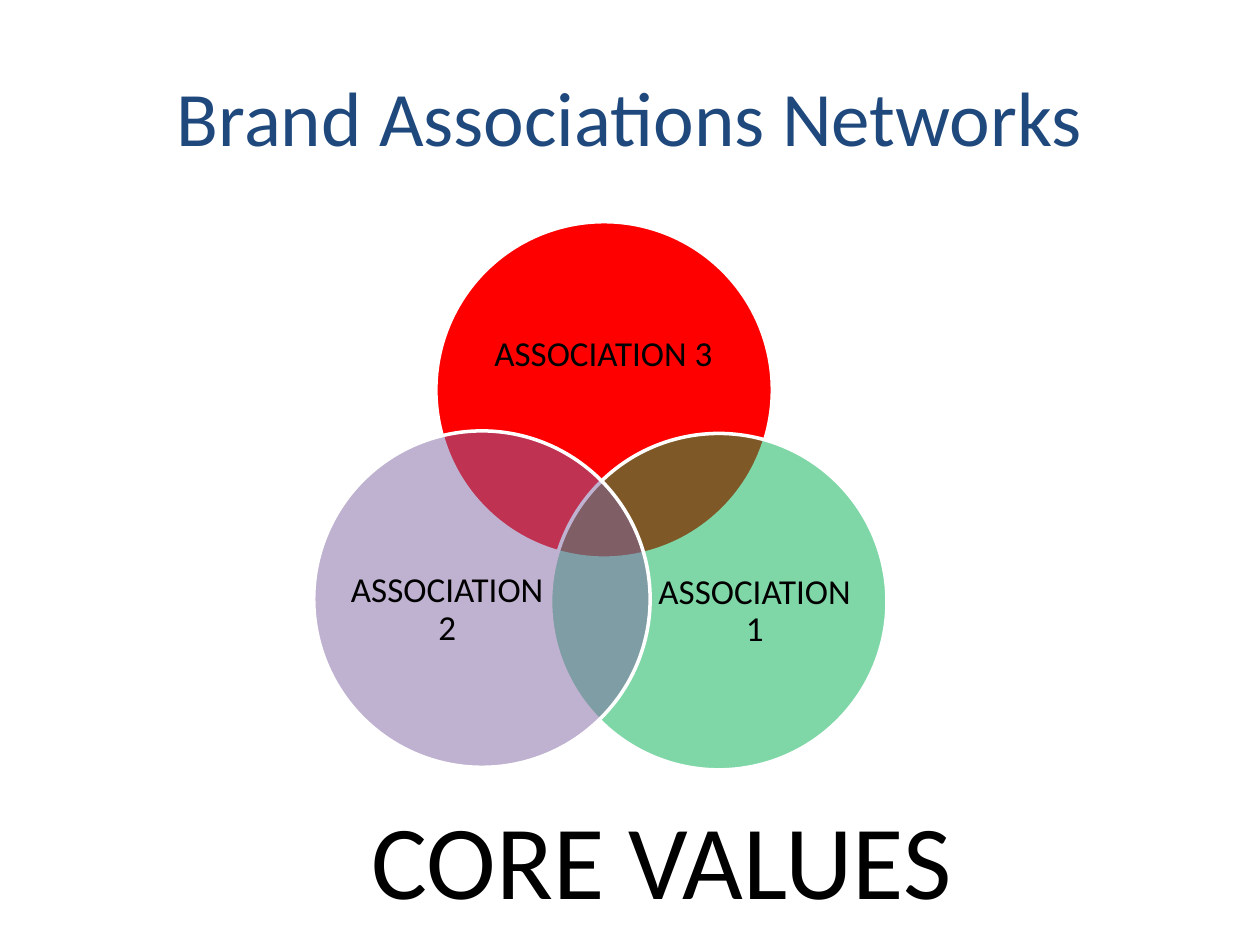
from lxml import etree
from pptx import Presentation
from pptx.dml.color import RGBColor
from pptx.enum.shapes import MSO_SHAPE
from pptx.enum.text import MSO_ANCHOR, PP_ALIGN
from pptx.oxml.ns import qn
from pptx.util import Inches, Pt

OVAL = MSO_SHAPE.OVAL
MIDDLE, TOP = MSO_ANCHOR.MIDDLE, MSO_ANCHOR.TOP
CENTER, LEFT = PP_ALIGN.CENTER, PP_ALIGN.LEFT

NAVY = RGBColor(0x1F, 0x49, 0x7D)
RED = RGBColor(0xFF, 0x00, 0x00)
GREEN = RGBColor(0x00, 0xB0, 0x50)
PURPLE = RGBColor(0x80, 0x64, 0xA2)
BLACK = RGBColor(0x00, 0x00, 0x00)
WHITE = RGBColor(0xFF, 0xFF, 0xFF)

FONT = "Calibri"
DIAMETER = 2.67
CIRCLES = [
    ("ASSOCIATION 3", (3.46, 1.76), RED, 100, (3.81, 2.22, 1.96, 1.2)),
    ("ASSOCIATION 1", (4.37, 3.44), GREEN, 50, (5.19, 4.12, 1.6, 1.47)),
    ("ASSOCIATION 2", (2.49, 3.42), PURPLE, 50, (2.75, 4.11, 1.6, 1.47)),
]


def write(frame, text, size, color=BLACK, align=CENTER, anchor=MIDDLE,
          insets=(0.1, 0.05, 0.1, 0.05), spacing=None, after=None):
    """Put one formatted paragraph into a text frame."""
    frame.word_wrap = True
    frame.vertical_anchor = anchor
    (frame.margin_left, frame.margin_top,
     frame.margin_right, frame.margin_bottom) = map(Inches, insets)
    para = frame.paragraphs[0]
    para.alignment = align
    para.line_spacing = spacing
    para.space_after = after
    span = para.add_run()
    span.text = text
    span.font.name = FONT
    span.font.size = Pt(size)
    span.font.color.rgb = color


class SlideBuilder:
    """Hold the current page and draw its elements in one style."""

    def __init__(self, page):
        self.page = page
        self.outline_color = WHITE
        self.outline_width = Pt(2)

    def title(self, text, area):
        """Place and fill the title placeholder."""
        box = self.page.shapes.title
        box.left, box.top, box.width, box.height = map(Inches, area)
        write(box.text_frame, text, 44, color=NAVY)

    def text(self, text, area, size, **style):
        """Add a text box."""
        box = self.page.shapes.add_textbox(*map(Inches, area))
        write(box.text_frame, text, size, **style)

    def circle(self, corner, color, opacity):
        """Add an outlined circle with the given opacity in percent."""
        circle = self.page.shapes.add_shape(
            OVAL, *map(Inches, (*corner, DIAMETER, DIAMETER)))
        circle.shadow.inherit = False
        circle.fill.solid()
        circle.fill.fore_color.rgb = color
        circle.line.color.rgb = self.outline_color
        circle.line.width = self.outline_width
        if opacity < 100:
            fill = circle.fill._xPr.find(qn("a:solidFill"))
            etree.SubElement(fill[0], qn("a:alpha"), val=str(opacity * 1000))


def main():
    """Build the Venn diagram slide and save the deck."""
    deck = Presentation()
    deck.slide_width, deck.slide_height = Inches(10), Inches(7.5)
    builder = SlideBuilder(deck.slides.add_slide(deck.slide_layouts[5]))
    builder.title("Brand Associations Networks", (0.75, 0.25, 8.5, 1.33))
    for label, corner, color, opacity, label_area in CIRCLES:
        builder.circle(corner, color, opacity)
        builder.text(label, label_area, 20, insets=(0, 0, 0, 0),
                     spacing=0.9, after=Pt(7))
    builder.text("CORE VALUES", (1.61, 6.26, 8.03, 1.11), 60, align=LEFT,
                 anchor=TOP, insets=(1.34, 0.05, 0.1, 0.05))
    deck.save("out.pptx")


if __name__ == "__main__":
    main()
